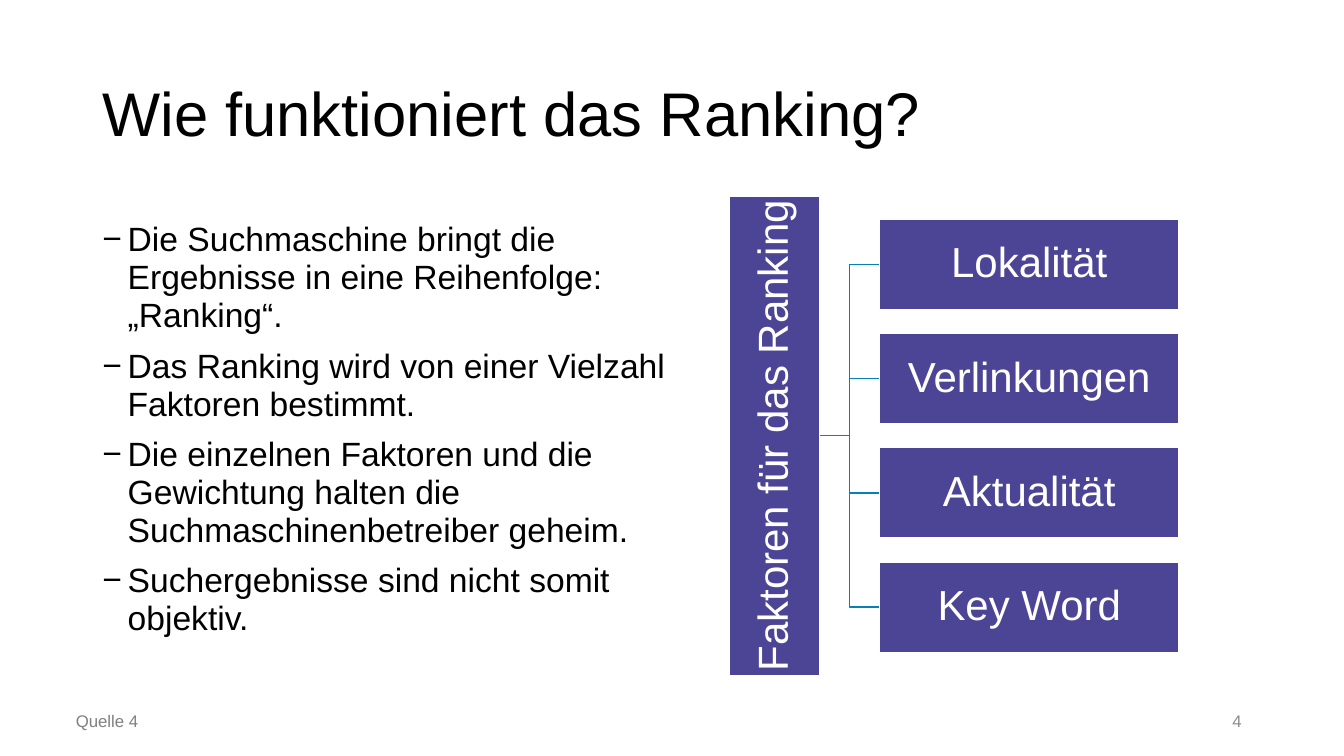
from dataclasses import dataclass

from lxml.etree import SubElement
from pptx import Presentation
from pptx.dml.color import RGBColor
from pptx.enum.shapes import MSO_SHAPE
from pptx.enum.text import MSO_ANCHOR, PP_ALIGN
from pptx.oxml.ns import qn
from pptx.util import Cm, Pt


@dataclass(frozen=True)
class Theme:
    font: str = "Arial"
    ink: RGBColor = RGBColor(0x00, 0x00, 0x00)
    white: RGBColor = RGBColor(0xFF, 0xFF, 0xFF)
    box: RGBColor = RGBColor(0x4C, 0x45, 0x96)
    branch: RGBColor = RGBColor(0x06, 0x81, 0xB5)
    source: RGBColor = RGBColor(0x80, 0x80, 0x80)
    number: RGBColor = RGBColor(0x8C, 0x8C, 0x8C)
    title_size: Pt = Pt(44)
    body_size: Pt = Pt(24)
    box_size: Pt = Pt(30)
    small_size: Pt = Pt(12)


theme = Theme()


def add_run(paragraph, text, size, color, align=PP_ALIGN.LEFT, spacing=0.9):
    paragraph.alignment = align
    paragraph.line_spacing = spacing
    run = paragraph.add_run()
    run.text = text
    run.font.name = theme.font
    run.font.size = size
    run.font.color.rgb = color


def add_frame(left, top, width, height, anchor=MSO_ANCHOR.MIDDLE):
    frame = slide.shapes.add_textbox(Cm(left), Cm(top), Cm(width), Cm(height)).text_frame
    frame.word_wrap = True
    frame.vertical_anchor = anchor
    return frame


presentation = Presentation()
presentation.slide_width = Cm(33.87)
presentation.slide_height = Cm(19.05)
slide = presentation.slides.add_slide(presentation.slide_layouts[6])

# Title
title = add_frame(2.33, 1.1, 29.21, 3.68)
add_run(title.paragraphs[0], "Wie funktioniert das Ranking?", theme.title_size, theme.ink)

# Bullet list
statements = [
    "Die Suchmaschine bringt die Ergebnisse in eine Reihenfolge: „Ranking“.",
    "Das Ranking wird von einer Vielzahl Faktoren bestimmt.",
    "Die einzelnen Faktoren und die Gewichtung halten die Suchmaschinenbetreiber geheim.",
    "Suchergebnisse sind nicht somit objektiv.",
]
body = add_frame(2.33, 5.46, 15.01, 11.5, MSO_ANCHOR.TOP)
for index, statement in enumerate(statements):
    paragraph = body.paragraphs[0] if index == 0 else body.add_paragraph()
    properties = paragraph._p.get_or_add_pPr()
    properties.set("marL", str(Cm(0.64)))
    properties.set("indent", str(-Cm(0.64)))
    SubElement(properties, qn("a:buFont"), typeface=theme.font)
    SubElement(properties, qn("a:buChar"), char="−")
    if index:
        paragraph.space_before = Pt(9)
    add_run(paragraph, statement, theme.body_size, theme.ink, spacing=0.94)

# Factor tree: measures
factors = ["Lokalität", "Verlinkungen", "Aktualität", "Key Word"]
box_height, row_pitch = 2.28, 2.88
root_length, factor_width = 12.09, 7.54
root_center, middle = 19.51, 10.98
root_right = root_center + box_height / 2
factor_left = 22.17
spine = (root_right + factor_left) / 2
row_centers = [middle + (row - (len(factors) - 1) / 2) * row_pitch for row in range(len(factors))]

# Factor tree: branches
for center in row_centers:
    builder = slide.shapes.build_freeform(Cm(root_right), Cm(middle))
    corners = [(spine, middle), (spine, center), (factor_left, center)]
    builder.add_line_segments([(Cm(x), Cm(y)) for x, y in corners], close=False)
    branch = builder.convert_to_shape()
    branch.shadow.inherit = False
    branch.fill.background()
    branch.line.color.rgb = theme.branch
    branch.line.width = Pt(1)

# Factor tree: boxes as (text, center x, center y, width, rotation)
boxes = [("Faktoren für das Ranking", root_center, middle, root_length, 270)]
for factor, center in zip(factors, row_centers):
    boxes.append((factor, factor_left + factor_width / 2, center, factor_width, 0))
for text, center_x, center_y, width, rotation in boxes:
    shape = slide.shapes.add_shape(
        MSO_SHAPE.RECTANGLE,
        Cm(center_x - width / 2), Cm(center_y - box_height / 2), Cm(width), Cm(box_height),
    )
    shape.rotation = rotation
    shape.shadow.inherit = False
    shape.fill.solid()
    shape.fill.fore_color.rgb = theme.box
    shape.line.color.rgb = theme.white
    shape.line.width = Pt(1)
    frame = shape.text_frame
    frame.word_wrap = True
    frame.vertical_anchor = MSO_ANCHOR.MIDDLE
    frame.margin_left = frame.margin_right = frame.margin_top = frame.margin_bottom = Cm(0.04)
    add_run(frame.paragraphs[0], text, theme.box_size, theme.white, PP_ALIGN.CENTER)

# Footer
source = add_frame(1.66, 17.78, 8.59, 0.77, MSO_ANCHOR.TOP)
add_run(source.paragraphs[0], "Quelle 4", theme.small_size, theme.source, spacing=1.0)
number = add_frame(23.92, 17.66, 7.62, 1.01)
add_run(number.paragraphs[0], "4", theme.small_size, theme.number, PP_ALIGN.RIGHT, 1.0)

presentation.save("out.pptx")
